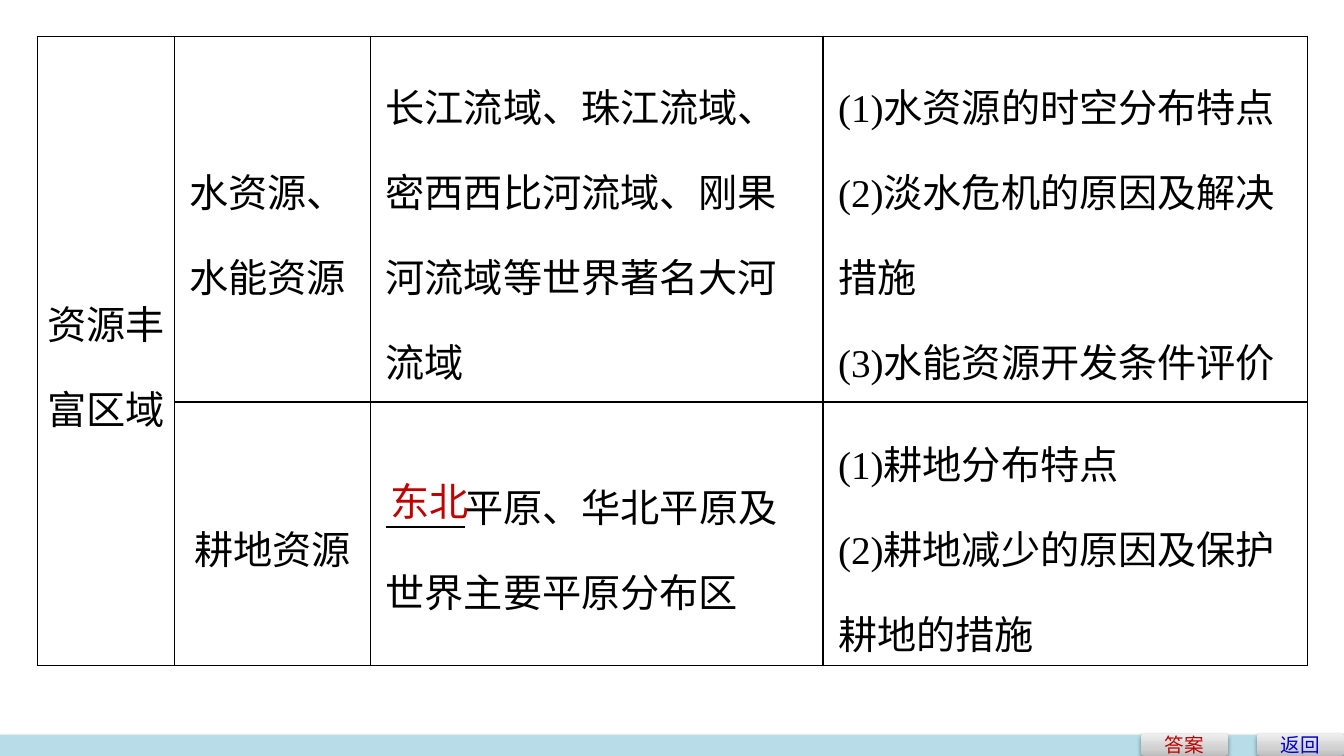
from copy import deepcopy
from dataclasses import dataclass

from lxml import etree
from pptx import Presentation
from pptx import util as u
from pptx.dml.color import RGBColor
from pptx.enum import shapes, text
from pptx.oxml import ns


@dataclass(frozen=True)
class Theme:
    latin: str = "Times New Roman"
    chinese: str = "Noto Sans CJK SC"
    body_size: int = 28
    button_size: int = 14
    black: str = "000000"
    answer: str = "C00000"
    back: str = "0000CC"
    footer: str = "B7DEE8"
    button_stops: tuple = ((0, "BDBDBD"), (0.35, "D1D1D1"), (1, "EEEEEE"))


@dataclass(frozen=True)
class CellText:
    row: int
    column: int
    paragraphs: tuple[str, ...]
    centered: bool = False
    first_indent: float = 0  # cm


@dataclass(frozen=True)
class Button:
    left: float  # cm
    label: str
    color: str


THEME = Theme()
COLUMN_WIDTHS = (3.45, 4.95, 11.4, 12.2)
ROW_HEIGHTS = (9.22, 6.63)
TABLE_LEFT, TABLE_TOP = 0.94, 0.91
BLANK_WIDTH = 1.98

CELLS = (
    CellText(0, 0, ("资源丰富区域",), centered=True),
    CellText(0, 1, ("水资源、水能资源",)),
    CellText(0, 2, ("长江流域、珠江流域、密西西比河流域、刚果河流域等世界著名大河流域",)),
    CellText(0, 3, ("(1)水资源的时空分布特点", "(2)淡水危机的原因及解决措施",
                    "(3)水能资源开发条件评价")),
    CellText(1, 1, ("耕地资源",), centered=True),
    CellText(1, 2, ("平原、华北平原及世界主要平原分布区",), first_indent=BLANK_WIDTH),
    CellText(1, 3, ("(1)耕地分布特点", "(2)耕地减少的原因及保护耕地的措施")),
)
BUTTONS = (Button(31.67, "返回", THEME.back), Button(28.75, "答案", THEME.answer))


def add_run(paragraph, wording: str, size: int, color: str, latin: str) -> None:
    run = paragraph.add_run()
    run.text = wording
    run.font.size = u.Pt(size)
    run.font.name = latin
    run.font.color.rgb = RGBColor.from_string(color)
    east_asian = etree.SubElement(run.font._element, ns.qn("a:ea"))
    east_asian.set("typeface", THEME.chinese)


def add_shadow(shape) -> None:
    shape.shadow.inherit = False
    effects = shape._element.spPr.find(ns.qn("a:effectLst"))
    shadow = etree.SubElement(effects, ns.qn("a:outerShdw"), blurRad="40000",
                              dist="20000", dir="5400000", rotWithShape="0")
    color = etree.SubElement(shadow, ns.qn("a:srgbClr"), val=THEME.black)
    etree.SubElement(color, ns.qn("a:alpha"), val="38000")


def add_borders(cell) -> None:
    properties = cell._tc.get_or_add_tcPr()
    for position, side in enumerate(("lnL", "lnR", "lnT", "lnB")):
        line = etree.Element(ns.qn(f"a:{side}"), w=str(u.Pt(1)))
        fill = etree.SubElement(line, ns.qn("a:solidFill"))
        etree.SubElement(fill, ns.qn("a:srgbClr"), val=THEME.black)
        properties.insert(position, line)


def fill_cell(cell, content: CellText) -> None:
    frame = cell.text_frame
    for index, wording in enumerate(content.paragraphs):
        paragraph = frame.paragraphs[0] if index == 0 else frame.add_paragraph()
        paragraph.line_spacing = 1.5
        if content.centered:
            paragraph.alignment = text.PP_ALIGN.CENTER
        else:
            properties = paragraph._p.get_or_add_pPr()
            properties.set("marL", str(u.Cm(0.2)))
            properties.set("indent", str(u.Cm(content.first_indent)))
        add_run(paragraph, wording, THEME.body_size, THEME.black, THEME.latin)


def add_resource_table(slide) -> None:
    frame = slide.shapes.add_table(
        len(ROW_HEIGHTS), len(COLUMN_WIDTHS), u.Cm(TABLE_LEFT), u.Cm(TABLE_TOP),
        u.Cm(sum(COLUMN_WIDTHS)), u.Cm(sum(ROW_HEIGHTS)))
    table = frame.table
    table.first_row = table.horz_banding = False
    for column, width in zip(table.columns, COLUMN_WIDTHS):
        column.width = u.Cm(width)
    for row, height in zip(table.rows, ROW_HEIGHTS):
        row.height = u.Cm(height)
    for cell in table.iter_cells():
        cell.fill.background()
        cell.margin_left = cell.margin_right = u.Cm(0.18)
        cell.margin_top = cell.margin_bottom = 0
        cell.vertical_anchor = text.MSO_ANCHOR.MIDDLE
        add_borders(cell)
    table.cell(0, 0).merge(table.cell(1, 0))
    for content in CELLS:
        fill_cell(table.cell(content.row, content.column), content)


def add_answer_blank(slide) -> None:
    left, height = 9.73, 13.28
    line = slide.shapes.add_connector(
        shapes.MSO_CONNECTOR.STRAIGHT, u.Cm(left), u.Cm(height),
        u.Cm(left + BLANK_WIDTH), u.Cm(height))
    line.line.width = u.Pt(1.5)
    line.line.color.rgb = RGBColor.from_string(THEME.black)
    etree.SubElement(line._element.spPr, ns.qn("a:effectLst"))

    box = slide.shapes.add_textbox(u.Cm(9.58), u.Cm(11.91), u.Cm(2.51), u.Cm(1.45))
    box.text_frame.word_wrap = False
    add_run(box.text_frame.paragraphs[0], "东北", THEME.body_size,
            THEME.answer, THEME.latin)


def add_footer_bar(slide) -> None:
    bar = slide.shapes.add_shape(shapes.MSO_SHAPE.RECTANGLE, 0, u.Cm(18.52),
                                 u.Cm(33.87), u.Cm(0.53))
    bar.fill.solid()
    bar.fill.fore_color.rgb = RGBColor.from_string(THEME.footer)
    bar.line.fill.background()
    add_shadow(bar)


def add_button(slide, button: Button) -> None:
    shape = slide.shapes.add_shape(shapes.MSO_SHAPE.ROUNDED_RECTANGLE,
                                   u.Cm(button.left), u.Cm(18.49),
                                   u.Cm(2.21), u.Cm(0.56))
    shape.fill.gradient()
    shape.fill.gradient_angle = 90
    stop_list = shape._element.spPr.find(".//" + ns.qn("a:gsLst"))
    stop_list.insert(1, deepcopy(stop_list[0]))
    for stop, (position, color) in zip(shape.fill.gradient_stops, THEME.button_stops):
        stop.position = position
        stop.color.rgb = RGBColor.from_string(color)
    shape.line.fill.background()
    add_shadow(shape)
    shape.text_frame.vertical_anchor = text.MSO_ANCHOR.MIDDLE
    paragraph = shape.text_frame.paragraphs[0]
    paragraph.alignment = text.PP_ALIGN.CENTER
    add_run(paragraph, button.label, THEME.button_size, button.color, THEME.chinese)


def main() -> None:
    presentation = Presentation()
    presentation.slide_width = u.Cm(33.87)
    presentation.slide_height = u.Cm(19.05)
    slide = presentation.slides.add_slide(presentation.slide_layouts[6])

    # Footer with navigation buttons
    add_footer_bar(slide)
    for button in BUTTONS:
        add_button(slide, button)

    # Resource table and the filled-in answer
    add_resource_table(slide)
    add_answer_blank(slide)

    presentation.save("out.pptx")


if __name__ == "__main__":
    main()
